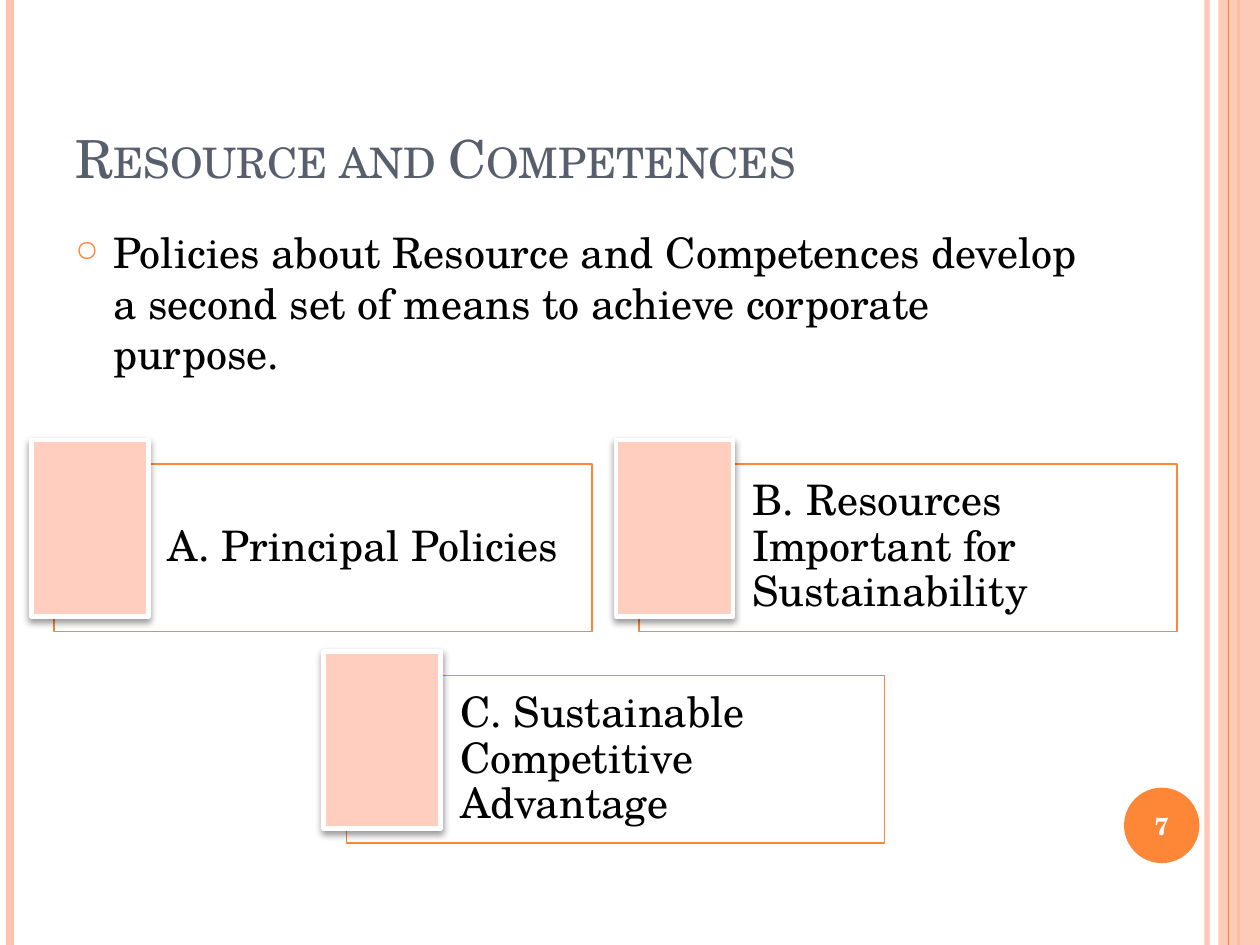
from dataclasses import dataclass

from lxml import etree
from pptx import Presentation
from pptx.dml.color import RGBColor
from pptx.enum.shapes import MSO_CONNECTOR, MSO_SHAPE
from pptx.enum.text import MSO_ANCHOR, PP_ALIGN
from pptx.oxml.ns import qn
from pptx.util import Cm, Pt

RECT, OVAL = MSO_SHAPE.RECTANGLE, MSO_SHAPE.OVAL
STRAIGHT = MSO_CONNECTOR.STRAIGHT
TOP, MID, LOW = MSO_ANCHOR.TOP, MSO_ANCHOR.MIDDLE, MSO_ANCHOR.BOTTOM
LEFT, CENTER = PP_ALIGN.LEFT, PP_ALIGN.CENTER


@dataclass(frozen=True)
class Theme:
    """Hold the colours, font and type sizes."""
    font: str = "TeX Gyre Schola"
    orange: str = "FE8637"
    peach: str = "FEC3AE"
    tile: str = "FFCEBF"
    slate: str = "575F6D"
    black: str = "000000"
    white: str = "FFFFFF"
    head: int = 30
    body: int = 24
    num: int = 14


THEME = Theme()


def rgb(code):
    """Turn a hex code into a colour."""
    return RGBColor.from_string(code)


def put(item, values):
    """Set each attribute of the item from a dict."""
    for name, value in values.items():
        setattr(item, name, value)


def sub(node, tag, **values):
    """Append an XML child with the given attributes."""
    return etree.SubElement(node, qn(tag), values)


def fade(node, share):
    """Give the first plain colour under the node an opacity in percent."""
    sub(next(node.iter(qn("a:srgbClr"))), "a:alpha", val=str(share * 1000))


def block(slide, kind, box, fill, line=None, width=1, share=100):
    """Draw a filled shape in a box."""
    shape = slide.shapes.add_shape(kind, *map(Cm, box))
    shape.shadow.inherit = False
    shape.fill.solid()
    shape.fill.fore_color.rgb = rgb(fill)
    if share < 100:
        fade(shape._element.spPr, share)
    if line:
        shape.line.color.rgb = rgb(line)
        shape.line.width = Pt(width)
    else:
        shape.line.fill.background()
    return shape


def rule(slide, left, top, high, color, width, share=100):
    """Draw a vertical rule."""
    line = slide.shapes.add_connector(
        STRAIGHT, Cm(left), Cm(top), Cm(left), Cm(top + high))
    line.line.color.rgb = rgb(color)
    line.line.width = Pt(width)
    if share < 100:
        fade(line._element.spPr, share)
    sub(line._element.spPr, "a:effectLst")


def write(shape, words, size, color, frame, para, bold=False):
    """Write one paragraph into a shape and return it."""
    text = shape.text_frame
    put(text, {"word_wrap": True, **frame})
    line = text.paragraphs[0]
    put(line, para)
    run = line.add_run()
    run.text = words
    put(run.font, {"name": THEME.font, "size": Pt(size), "bold": bold})
    run.font.color.rgb = rgb(color)
    return line


def frame(slide, box):
    """Draw the rules and the band along the sides of the box."""
    left, top, wide, high = box
    right = left + wide
    rule(slide, right - 1.07, top, high, THEME.peach, 3, 93)
    rule(slide, left + 0.2, top, high, THEME.peach, 4.5)
    rule(slide, right - 0.43, top, high, THEME.orange, 1.5)
    block(slide, RECT, (right - 0.84, top, 0.84, high), THEME.peach, share=87)
    rule(slide, right - 0.64, top, high, THEME.orange, 0.75)


def title(slide, box, words):
    """Write the heading in small capitals."""
    area = slide.shapes.add_textbox(*map(Cm, box))
    line = write(area, words, THEME.head, THEME.slate,
                 {"vertical_anchor": LOW}, {"alignment": LEFT})
    line.runs[0].font._element.set("cap", "small")


def body(slide, box, words):
    """Write the bulleted statement."""
    area = slide.shapes.add_textbox(*map(Cm, box))
    line = write(area, words, THEME.body, THEME.black,
                 {"vertical_anchor": TOP},
                 {"alignment": LEFT, "space_before": Pt(6)})
    props = line._p.get_or_add_pPr()
    props.set("marL", str(Cm(0.76)))
    props.set("indent", str(-Cm(0.76)))
    sub(sub(props, "a:buClr"), "a:srgbClr", val=THEME.orange)
    sub(props, "a:buSzPct", val="70000")
    sub(props, "a:buChar", char="○")


def badge(slide, box, words):
    """Draw the page number in a disc."""
    disc = block(slide, OVAL, box, THEME.orange)
    inset = {f"margin_{side}": 0 for side in ("left", "right", "top", "bottom")}
    write(disc, words, THEME.num, THEME.white,
          {"vertical_anchor": MID, **inset}, {"alignment": CENTER}, True)


def card(slide, box, words):
    """Draw a framed label with a raised tile at its left."""
    left, top, _, high = box
    label = block(slide, RECT, box, THEME.white, THEME.orange, share=40)
    inset = {f"margin_{side}": Cm(0.25) for side in ("right", "top", "bottom")}
    write(label, words, THEME.body, THEME.black,
          {"vertical_anchor": MID, "margin_left": Cm(2.29), **inset},
          {"alignment": LEFT, "line_spacing": 0.9})
    tile = block(slide, RECT, (left - 0.46, top - 0.48, 2.36, high + 0.18),
                 THEME.tile, THEME.white, 2.75)
    glow = sub(tile._element.spPr.find(qn("a:effectLst")), "a:outerShdw",
               blurRad=str(Pt(4)), dist=str(Pt(2)), dir="5400000",
               rotWithShape="0")
    tint = sub(glow, "a:srgbClr", val=THEME.black)
    sub(tint, "a:alpha", val="40000")


def cards(slide, box, rows):
    """Lay out rows of cards, each row centred in the box."""
    left, top, wide, high = box
    width, deep, gap = 10.85, 3.38, 0.94
    step = (high - deep) / (len(rows) - 1)
    for i, row in enumerate(rows):
        span = len(row) * (width + gap) - gap
        start = left + (wide - span) / 2
        for j, words in enumerate(row):
            spot = (start + j * (width + gap), top + i * step, width, deep)
            card(slide, spot, words)


def main():
    """Build and save the slide."""
    deck = Presentation()
    wide, high = 25.4, 19.05
    put(deck, {"slide_width": Cm(wide), "slide_height": Cm(high)})
    slide = deck.slides.add_slide(deck.slide_layouts[6])
    frame(slide, (0, 0, wide, high))
    title(slide, (1.27, 0.76, 20.75, 3.18), "Resource and Competences")
    body(slide, (1.27, 4.45, 20.75, 13.54),
         "Policies about Resource and Competences develop a second set "
         "of means to achieve corporate purpose.")
    badge(slide, (22.66, 15.88, 1.52, 1.52), "7")
    cards(slide, (1.09, 9.35, 22.64, 7.65), [
        ["A. Principal Policies", "B. Resources Important for Sustainability"],
        ["C. Sustainable Competitive Advantage"],
    ])
    deck.save("out.pptx")


if __name__ == "__main__":
    main()
